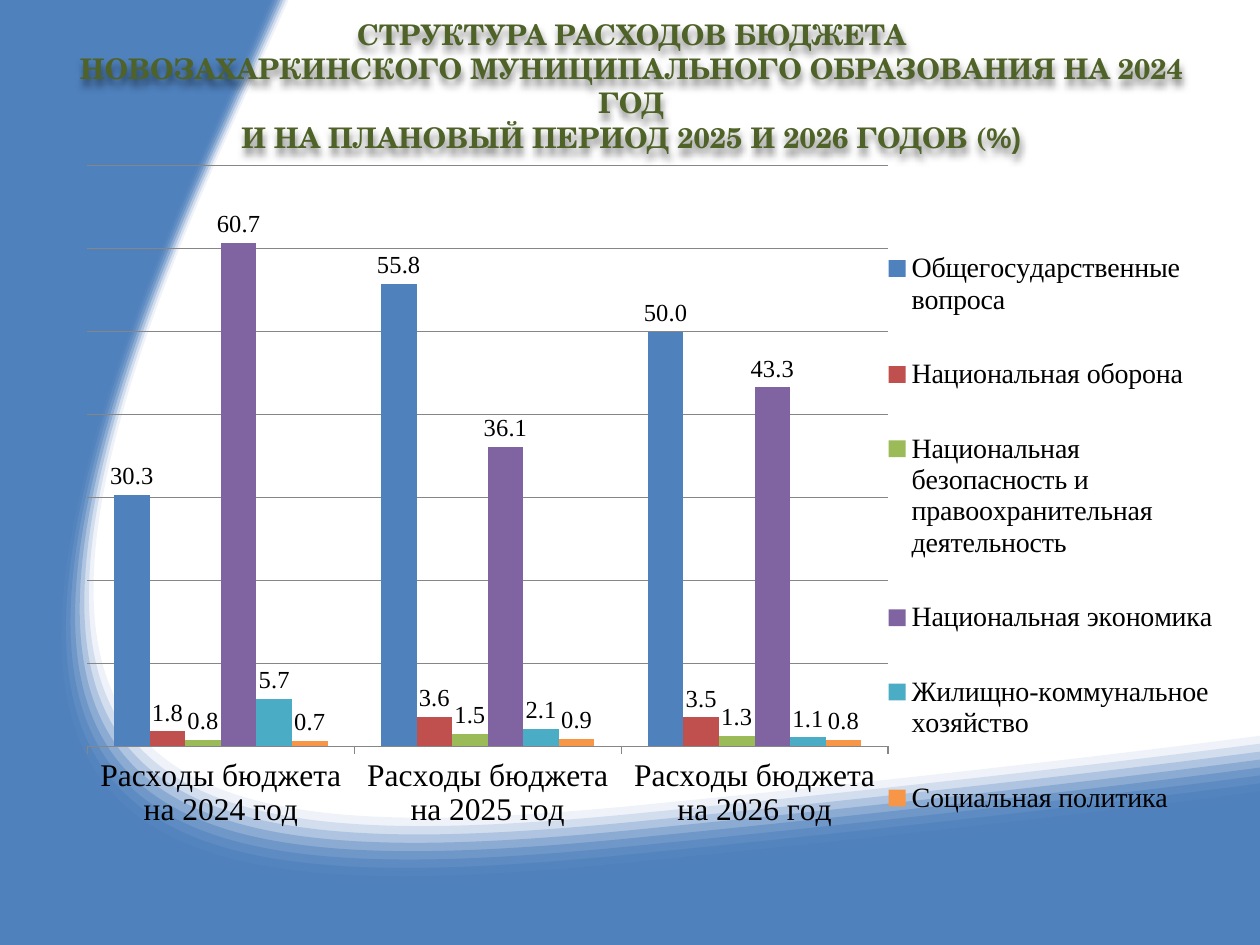
from lxml.etree import SubElement
from pptx import Presentation
from pptx.chart.data import CategoryChartData
from pptx.dml.color import RGBColor
from pptx.enum.chart import (XL_CHART_TYPE, XL_LABEL_POSITION,
                             XL_LEGEND_POSITION, XL_TICK_LABEL_POSITION,
                             XL_TICK_MARK)
from pptx.enum.text import MSO_ANCHOR, PP_ALIGN
from pptx.oxml import parse_xml
from pptx.oxml.ns import nsdecls, qn
from pptx.util import Inches, Pt

BLUE, GREEN, GREY, BLACK = "4F81BD", "4F6228", "868686", "000000"
SERIF = "Times New Roman"
WIDE, HIGH = 10, 7.5
BANDS = 11

TITLE = ("СТРУКТУРА РАСХОДОВ БЮДЖЕТА\v"
         "НОВОЗАХАРКИНСКОГО МУНИЦИПАЛЬНОГО ОБРАЗОВАНИЯ НА 2024 ГОД\v"
         "И НА ПЛАНОВЫЙ ПЕРИОД 2025 И 2026 ГОДОВ (")
YEARS = [f"Расходы бюджета на {year} год" for year in (2024, 2025, 2026)]
COSTS = [
    ("Общегосударственные вопроса", (30.3, 55.8, 50.0), BLUE),
    ("Национальная оборона", (1.8, 3.6, 3.5), "C0504D"),
    ("Национальная безопасность и правоохранительная деятельность",
     (0.8, 1.5, 1.3), "9BBB59"),
    ("Национальная экономика", (60.7, 36.1, 43.3), "8064A2"),
    ("Жилищно-коммунальное хозяйство", (5.7, 2.1, 1.1), "4BACC6"),
    ("Социальная политика", (0.7, 0.9, 0.8), "F79646"),
]

# Each step is one point (a straight line) or three (a Bezier curve).
# Edge of the solid wave, from the top of the slide to its right side
EDGE = [[(1.99, 0)],
        [(1.99, 0), (1.8, 0.41), (1.47, 1.15)],
        [(-1.21, 7.12), (0.8, 7.55), (4.91, 7.14)],
        [(8.06, 6.82), (10, 6.56), (10, 6.56)]]
# Far edges of the palest and the darkest band, from the right to the top
PALE = [[(10, 5.84)],
        [(9.98, 5.84), (8.14, 6.09), (5.18, 6.38)],
        [(1.21, 6.78), (-0.55, 6.32), (1.8, 1.09)],
        [(2.11, 0.4), (2.29, 0.01), (2.29, 0)]]
DARK = [[(10, 6.47)],
        [(9.74, 6.51), (7.86, 6.75), (4.98, 7.04)],
        [(0.92, 7.45), (-1.07, 7.03), (1.58, 1.14)],
        [(1.86, 0.52), (2.03, 0.11), (2.08, 0)]]


def rgb(code):
    return RGBColor.from_string(code)


def blend(a, b, t):
    """Mix two nested lists of numbers of the same form."""
    if isinstance(a, (int, float)):
        return a + (b - a) * t
    return [blend(x, y, t) for x, y in zip(a, b)]


def style(font, form):
    """Set font attributes from a dict; colour goes in as hex."""
    for name, value in form.items():
        if name == "color":
            font.color.rgb = rgb(value)
        else:
            setattr(font, name, value)


def place(part, index, frame, inner=False):
    """Fix the layout of a chart part as fractions of the chart."""
    for old in part.findall(qn("c:layout")):
        part.remove(old)
    tags = '<c:layoutTarget val="inner"/>' if inner else ""
    tags += '<c:xMode val="edge"/><c:yMode val="edge"/>'
    tags += "".join(f'<c:{k} val="{v}"/>' for k, v in zip("xywh", frame))
    part.insert(index, parse_xml(
        f'<c:layout {nsdecls("c")}><c:manualLayout>{tags}'
        '</c:manualLayout></c:layout>'))


class Deck:
    title = {"size": Pt(16.2), "bold": True, "color": GREEN}
    axis = {"size": Pt(18), "name": SERIF, "color": BLACK}
    key = {"size": Pt(16), "name": SERIF, "color": BLACK}
    label = {"size": Pt(14), "name": SERIF, "color": BLACK}

    def __init__(self):
        self.deck = Presentation()
        self.deck.slide_width = Inches(WIDE)
        self.deck.slide_height = Inches(HIGH)
        self.slide = self.deck.slides.add_slide(self.deck.slide_layouts[6])
        self.slide.background.fill.solid()
        self.slide.background.fill.fore_color.rgb = rgb("FFFFFF")

    def shape(self, steps, alpha=100):
        """Draw a closed outline of lines and curves on a full-slide frame."""
        wide, high = Inches(WIDE), Inches(HIGH)
        pen = self.slide.shapes.build_freeform(0, 0)
        pen.add_line_segments([(wide, 0), (wide, high), (0, high)])
        shape = pen.convert_to_shape()
        track = shape._element.find(".//" + qn("a:path"))
        for old in list(track):
            track.remove(old)
        for i, dots in enumerate(steps):
            kind = "cubicBezTo" if len(dots) == 3 else "lnTo"
            step = SubElement(track, qn(f"a:{kind if i else 'moveTo'}"))
            for x, y in dots:
                SubElement(step, qn("a:pt"), x=str(int(Inches(x))),
                           y=str(int(Inches(y))))
        SubElement(track, qn("a:close"))
        shape.shadow.inherit = False
        shape.line.fill.background()
        shape.fill.solid()
        shape.fill.fore_color.rgb = rgb(BLUE)
        if alpha < 100:
            tone = shape._element.spPr.find(".//" + qn("a:srgbClr"))
            SubElement(tone, qn("a:alpha"), val=str(alpha * 1000))

    def wave(self):
        self.shape([[(0, 0)], *EDGE, [(WIDE, HIGH)], [(0, HIGH)]])
        for i in range(BANDS):
            far = blend(PALE, DARK, i / (BANDS - 1))
            self.shape(EDGE + far, round(100 * (i + 1) / BANDS))

    def head(self, box, runs):
        shape = self.slide.shapes.add_textbox(*map(Inches, box))
        frame = shape.text_frame
        frame.word_wrap = True
        frame.vertical_anchor = MSO_ANCHOR.MIDDLE
        para = frame.paragraphs[0]
        para.alignment = PP_ALIGN.CENTER
        for text, face in runs:
            for i, line in enumerate(text.split("\v")):
                if i:
                    para.add_line_break()
                run = para.add_run()
                run.text = line
                style(run.font, {**self.title, "name": face})
        shape._element.spPr.append(parse_xml(
            f'<a:effectLst {nsdecls("a")}><a:outerShdw blurRad="50800" '
            'dist="38100" dir="5400000"><a:srgbClr val="000000">'
            '<a:alpha val="50000"/></a:srgbClr></a:outerShdw></a:effectLst>'))

    def chart(self, box, cats, rows):
        data = CategoryChartData(number_format="0.0")
        data.categories = cats
        for name, vals, _ in rows:
            data.add_series(name, vals)
        chart = self.slide.shapes.add_chart(
            XL_CHART_TYPE.COLUMN_CLUSTERED, *map(Inches, box), data).chart
        chart.has_title = False
        style(chart.font, self.axis)
        plot = chart.plots[0]
        plot.gap_width, plot.overlap = 150, 0
        plot.vary_by_categories = False
        for bar, (_, _, code) in zip(plot.series, rows):
            bar.format.fill.solid()
            bar.format.fill.fore_color.rgb = rgb(code)
            bar.invert_if_negative = False
            tags = bar.data_labels
            form = {"show_value": True, "number_format": "0.0",
                    "number_format_is_linked": False,
                    "position": XL_LABEL_POSITION.OUTSIDE_END}
            for name, value in form.items():
                setattr(tags, name, value)
            style(tags.font, self.label)
        self.axes(chart)
        chart.has_legend = True
        legend = chart.legend
        legend.position = XL_LEGEND_POSITION.RIGHT
        legend.include_in_layout = False
        style(legend.font, self.key)
        place(legend._element, 1, (0.7, 0.06, 0.3, 0.88))
        area = chart._chartSpace.chart.plotArea
        place(area, 0, (0.02, 0, 0.69, 0.79), inner=True)

    def axes(self, chart):
        cat, val = chart.category_axis, chart.value_axis
        style(cat.tick_labels.font, self.axis)
        cat.major_tick_mark = XL_TICK_MARK.OUTSIDE
        cat.tick_label_position = XL_TICK_LABEL_POSITION.LOW
        form = {"minimum_scale": 0, "maximum_scale": 70, "major_unit": 10,
                "has_major_gridlines": True, "visible": False}
        for name, value in form.items():
            setattr(val, name, value)
        for line in (cat.format.line, val.major_gridlines.format.line):
            line.color.rgb = rgb(GREY)
            line.width = Pt(0.75)


def main():
    deck = Deck()
    deck.wave()
    deck.head((0.51, 0.21, 9, 0.94),
              [(TITLE, "TeX Gyre Schola"), ("%)", "Arial")])
    deck.chart((0.51, 1.31, 9.21, 5.84), YEARS, COSTS)
    deck.deck.save("out.pptx")


if __name__ == "__main__":
    main()
